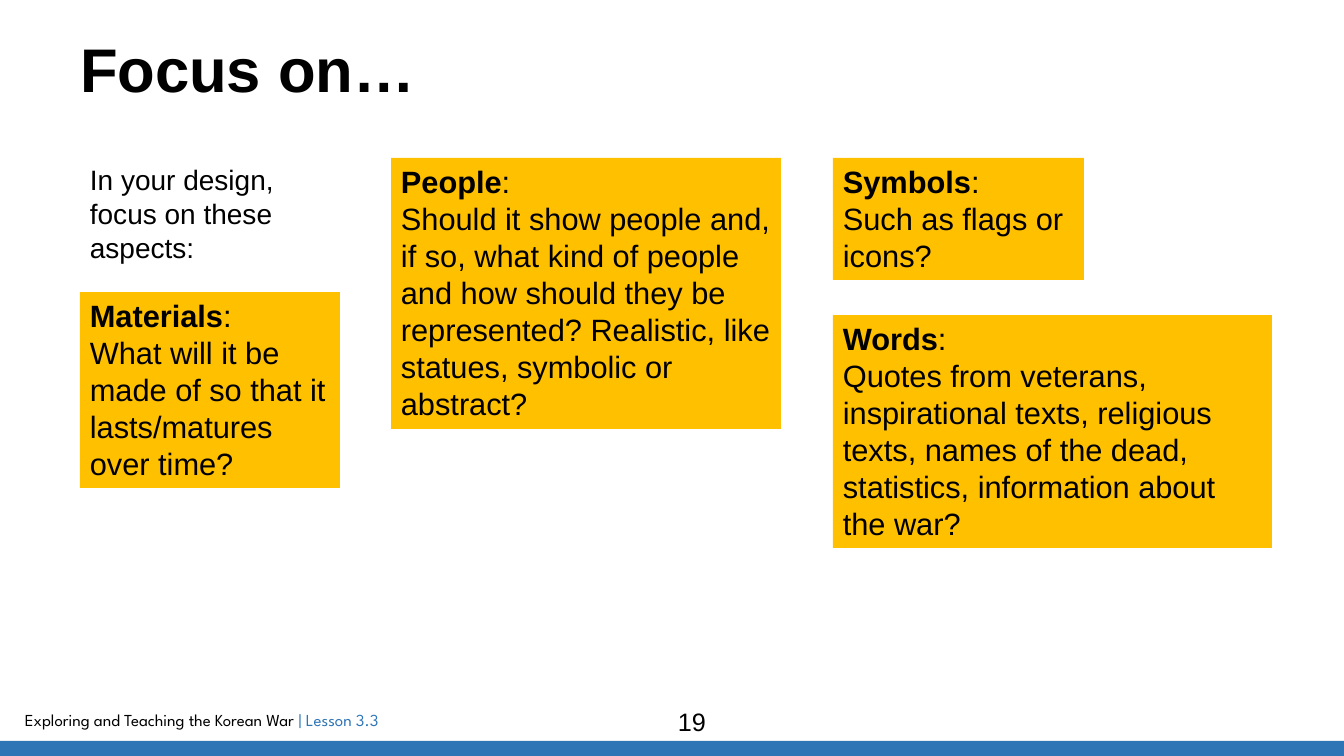
"""Build the "Focus on…" slide about aspects of a memorial design."""
import pptx
import pptx.dml.color
import pptx.enum.shapes
import pptx.enum.text
import pptx.util

BLACK = pptx.dml.color.RGBColor(0x00, 0x00, 0x00)
BLUE = pptx.dml.color.RGBColor(0x2E, 0x75, 0xB6)
GOLD = pptx.dml.color.RGBColor(0xFF, 0xC0, 0x00)
BODY_FONT = "Arial"
FOOTER_FONT = "League Spartan"

PAGE_WIDTH, PAGE_HEIGHT = 1344, 756
SCALE = pptx.util.Inches(7.5) / PAGE_HEIGHT
LEFT, MIDDLE, RIGHT = 80, 391, 833
TOP = 158
STRIPE_HEIGHT = 15

TITLE = "Focus on…"
INTRO = "In your design, focus on these aspects:"
FOOTER = [("Exploring and Teaching the Korean War ", BLACK), ("| Lesson 3.3", BLUE)]
PAGE_NUMBER = "19"
ASPECTS = [
    ("Materials", "What will it be made of so that it lasts/matures over time?",
     (LEFT, 292, 260, 196)),
    ("Words", "Quotes from veterans, inspirational texts, religious texts, "
     "names of the dead, statistics, information about the war?",
     (RIGHT, 315, 439, 233)),
    ("Symbols", "Such as flags or icons?", (RIGHT, TOP, 251, 122)),
    ("People", "Should it show people and, if so, what kind of people and how "
     "should they be represented? Realistic, like statues, symbolic or abstract?",
     (MIDDLE, TOP, 390, 271)),
]


def emu(lengths):
    return [pptx.util.Emu(round(length * SCALE)) for length in lengths]


def add_span(para, text, size, color=BLACK, bold=False, font=BODY_FONT):
    span = para.add_run()
    span.text = text
    span.font.name = font
    span.font.size = pptx.util.Pt(size)
    span.font.bold = bold
    span.font.color.rgb = color


def add_text(page, place):
    frame = page.shapes.add_textbox(*emu(place)).text_frame
    frame.word_wrap = True
    return frame.paragraphs[0]


def add_rectangle(page, place, color):
    box = page.shapes.add_shape(
        pptx.enum.shapes.MSO_SHAPE.RECTANGLE, *emu(place))
    box.shadow.inherit = False
    box.fill.solid()
    box.fill.fore_color.rgb = color
    box.line.fill.background()
    return box


def add_aspect(page, name, question, place):
    frame = add_rectangle(page, place, GOLD).text_frame
    frame.word_wrap = True
    frame.auto_size = pptx.enum.text.MSO_AUTO_SIZE.SHAPE_TO_FIT_TEXT
    frame.vertical_anchor = pptx.enum.text.MSO_ANCHOR.TOP
    heading, body = frame.paragraphs[0], frame.add_paragraph()
    add_span(heading, name, 22, bold=True)
    add_span(heading, ":", 22)
    add_span(body, question, 22)
    for para in (heading, body):
        para.alignment = pptx.enum.text.PP_ALIGN.LEFT


def add_title(page):
    title = page.shapes.title
    title.left, title.top, title.width, title.height = emu((LEFT, 39, 1249, 97))
    frame = title.text_frame
    frame.margin_left = frame.margin_right = 0
    frame.margin_top = frame.margin_bottom = 0
    frame.word_wrap = True
    frame.vertical_anchor = pptx.enum.text.MSO_ANCHOR.TOP
    para = frame.paragraphs[0]
    para.alignment = pptx.enum.text.PP_ALIGN.LEFT
    para.line_spacing = 0.9
    add_span(para, TITLE, 44, bold=True)


def main():
    deck = pptx.Presentation()
    deck.slide_width, deck.slide_height = emu((PAGE_WIDTH, PAGE_HEIGHT))
    page = deck.slides.add_slide(deck.slide_layouts.get_by_name("Title Only"))
    add_title(page)

    footer = add_text(page, (15, 705, 788, 30))
    for text, color in FOOTER:
        add_span(footer, text, 12, color, font=FOOTER_FONT)
    add_rectangle(
        page, (0, PAGE_HEIGHT - STRIPE_HEIGHT, PAGE_WIDTH, STRIPE_HEIGHT), BLUE)
    number = add_text(page, (436, 701, 512, 40))
    number.alignment = pptx.enum.text.PP_ALIGN.CENTER
    add_span(number, PAGE_NUMBER, 18)

    for name, question, place in ASPECTS:
        add_aspect(page, name, question, place)
    add_span(add_text(page, (LEFT, TOP, 260, 112)), INTRO, 20)
    deck.save("out.pptx")


if __name__ == "__main__":
    main()
